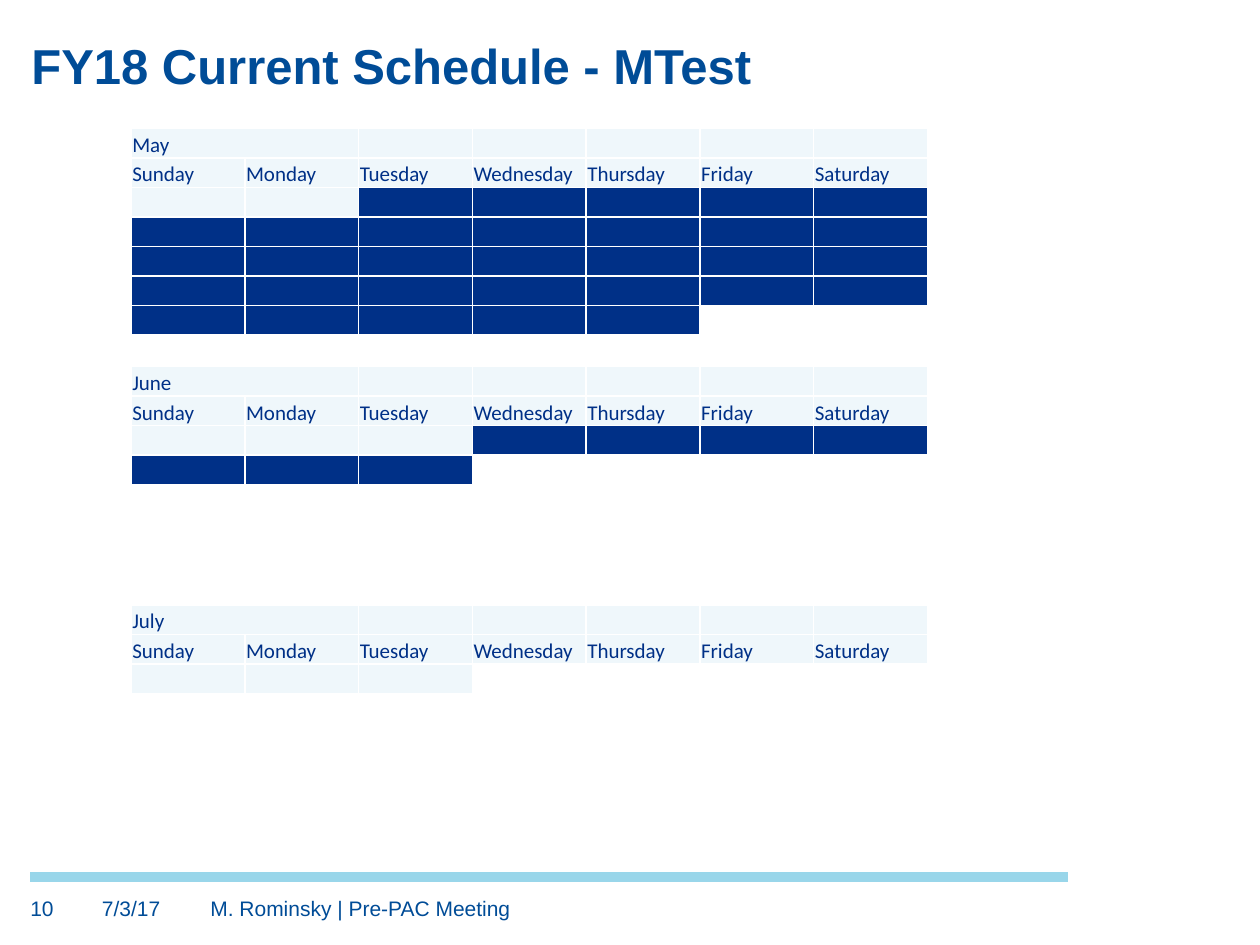
from dataclasses import dataclass

from lxml.etree import SubElement
from pptx import Presentation
from pptx.dml.color import RGBColor
from pptx.enum.shapes import MSO_CONNECTOR
from pptx.enum.text import MSO_ANCHOR
from pptx.oxml.ns import qn
from pptx.util import Inches, Pt

WEEKDAYS = ["Sunday", "Monday", "Tuesday", "Wednesday", "Thursday", "Friday", "Saturday"]
MONTHS = [
    ("May", ["ooxxxxx", "xxxxxxx", "xxxxxxx", "xxxxxxx", "xxxxx--"]),
    ("June", ["oooxxxx", "xxx----", "-------", "-------", "-------"]),
    ("July", ["ooo----", "-------", "-------", "-------", "-------"]),
]
TITLE = "FY18 Current Schedule - MTest"
FOOTER = [("10", 0.24, 0.45), ("7/3/17", 0.81, 0.74), ("M. Rominsky | Pre-PAC Meeting", 1.67, 6.85)]


@dataclass(frozen=True)
class Theme:
    heading: str = "004C97"
    booked: str = "003087"
    pale: str = "EFF7FB"
    border: str = "FFFFFF"
    rule: str = "99D6EA"
    text_font: str = "Arial"
    table_font: str = "Calibri"
    title_size: int = 28
    body_size: int = 12
    rule_width: int = 6
    border_width: int = 1


THEME = Theme()
DAY_FILLS = {"o": THEME.pale, "x": THEME.booked, "-": None}
TABLE_LEFT, TABLE_TOP, TABLE_STEP = 1.04, 1.02, 1.89
TABLE_WIDTH, TABLE_HEIGHT = 6.32, 1.64


def add_run(paragraph, text, font_name, size, color, bold=False):
    run = paragraph.add_run()
    run.text = text
    run.font.name = font_name
    run.font.size = Pt(size)
    run.font.bold = bold
    run.font.color.rgb = RGBColor.from_string(color)


def add_text(slide, text, left, top, width, height, size, bold=False, anchor=MSO_ANCHOR.TOP):
    frame = slide.shapes.add_textbox(*map(Inches, (left, top, width, height))).text_frame
    frame.word_wrap = True
    frame.vertical_anchor = anchor
    frame.margin_left = frame.margin_right = frame.margin_top = frame.margin_bottom = 0
    add_run(frame.paragraphs[0], text, THEME.text_font, size, THEME.heading, bold)


def add_rule(slide, left, right, top):
    rule = slide.shapes.add_connector(MSO_CONNECTOR.STRAIGHT, *map(Inches, (left, top, right, top)))
    rule.line.color.rgb = RGBColor.from_string(THEME.rule)
    rule.line.width = Pt(THEME.rule_width)
    SubElement(rule._element.spPr, qn("a:effectLst"))


def style_cell(cell, text, fill):
    cell.vertical_anchor = MSO_ANCHOR.BOTTOM
    cell.margin_left = cell.margin_right = cell.margin_top = Inches(0.01)
    cell.margin_bottom = 0
    properties = cell._tc.get_or_add_tcPr()
    for side in ("lnL", "lnR", "lnT", "lnB"):
        border = SubElement(properties, qn(f"a:{side}"), w=str(Pt(THEME.border_width)))
        SubElement(SubElement(border, qn("a:solidFill")), qn("a:srgbClr"), val=THEME.border)
    if fill:
        cell.fill.solid()
        cell.fill.fore_color.rgb = RGBColor.from_string(fill)
    else:
        cell.fill.background()
    paragraph = cell.text_frame.paragraphs[0]
    if text:
        add_run(paragraph, text, THEME.table_font, THEME.body_size, THEME.booked)
    else:
        SubElement(paragraph._p, qn("a:endParaRPr"), sz=str(THEME.body_size * 100))


def add_month(slide, name, weeks, top):
    columns = len(WEEKDAYS)
    rows = [[(name, THEME.pale)] + [("", THEME.pale)] * (columns - 1)]
    rows.append([(day, THEME.pale) for day in WEEKDAYS])
    rows += [[("", DAY_FILLS[day]) for day in week] for week in weeks]
    bounds = map(Inches, (TABLE_LEFT, top, TABLE_WIDTH, TABLE_HEIGHT))
    table = slide.shapes.add_table(len(rows), columns, *bounds).table
    table.first_row = table.horz_banding = False
    for row_index, row in enumerate(rows):
        for column_index, (text, fill) in enumerate(row):
            style_cell(table.cell(row_index, column_index), text, fill)
    table.cell(0, 0).merge(table.cell(0, 1))


def main():
    presentation = Presentation()
    presentation.slide_width, presentation.slide_height = Inches(10), Inches(7.5)
    slide = presentation.slides.add_slide(presentation.slide_layouts[6])
    add_rule(slide, 0.24, 8.48, 6.96)
    add_text(slide, TITLE, 0.25, 0.28, 9.5, 0.47, THEME.title_size, True, MSO_ANCHOR.BOTTOM)
    for text, left, width in FOOTER:
        add_text(slide, text, left, 7.11, width, 0.26, THEME.body_size)
    for index, (name, weeks) in enumerate(MONTHS):
        add_month(slide, name, weeks, TABLE_TOP + index * TABLE_STEP)
    presentation.save("out.pptx")


if __name__ == "__main__":
    main()
